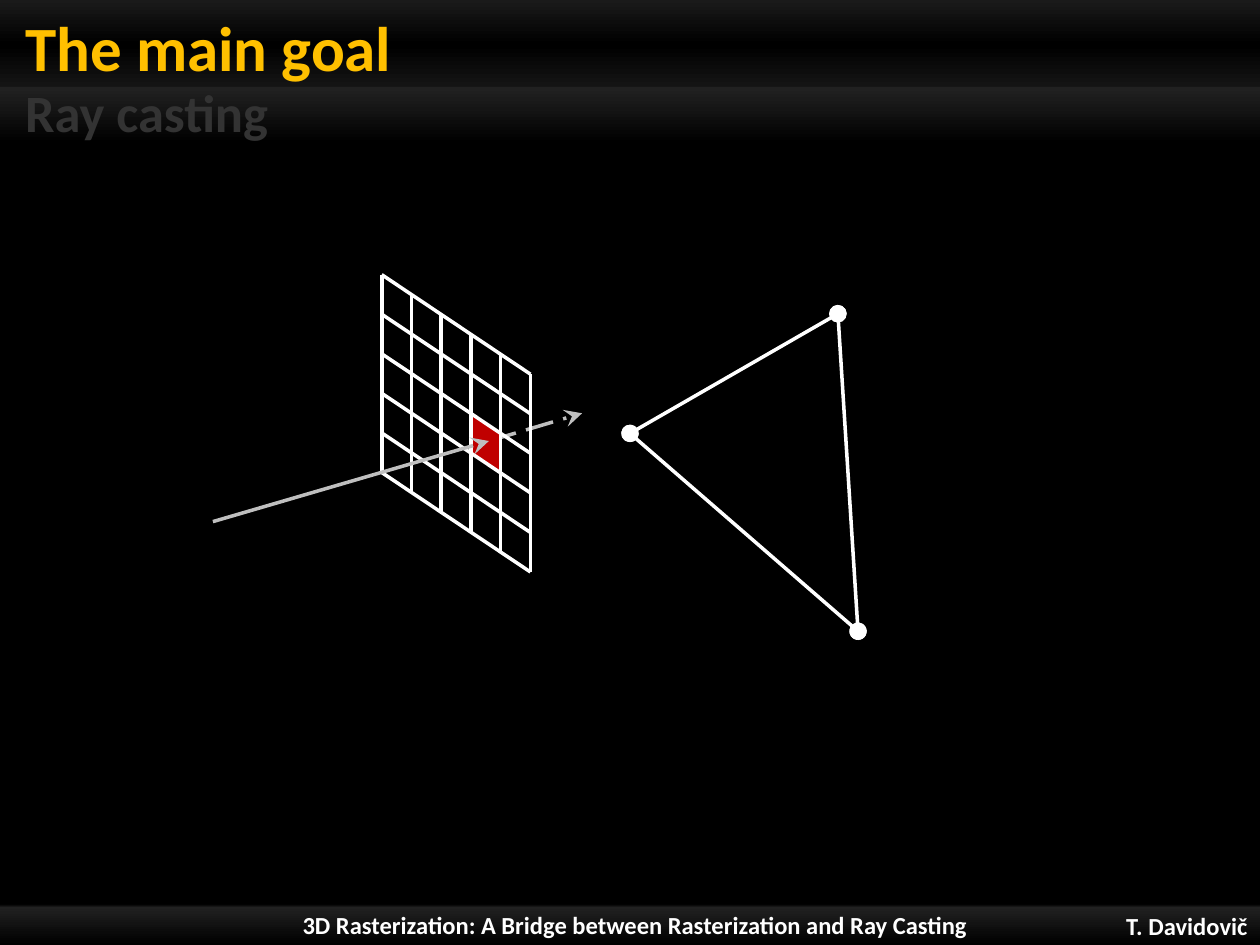
from lxml import etree
from pptx import Presentation
from pptx.dml.color import RGBColor
from pptx.enum import shapes as sh, text as tx
from pptx.oxml.ns import qn
from pptx.util import Inches, Pt

COLORS = {"back": "000000", "white": "FFFFFF", "gold": "FFC000",
          "dim": "333333", "ray": "BFBFBF", "hit": "C00000"}
FOOT = [(5, "000000"), (10, "141414"), (11, "212121"), (100, "000000")]
HEAD = [(0, "1A1A1A"), (31, "000000"), (60, "141414"), (61, "212121"),
        (100, "000000")]


def rgb(name):
    return RGBColor.from_string(COLORS[name])


def add_band(slide, box, stops):
    """Full-width bar with a vertical gradient of (percent, hex) stops."""
    band = slide.shapes.add_shape(sh.MSO_SHAPE.RECTANGLE, *map(Inches, box))
    band.shadow.inherit = False
    band.line.fill.background()
    band.fill.gradient()
    band.fill.gradient_angle = 270
    grad = band.fill._fill._gradFill.find(qn("a:gsLst"))
    for old in list(grad):
        grad.remove(old)
    for pos, tone in stops:
        stop = etree.SubElement(grad, qn("a:gs"), pos=str(pos * 1000))
        etree.SubElement(stop, qn("a:srgbClr"), val=tone)


def set_text(shape, box, words, size, color, align, anchor, left=0.1):
    shape.left, shape.top, shape.width, shape.height = map(Inches, box)
    frame = shape.text_frame
    frame.word_wrap = True
    frame.auto_size = tx.MSO_AUTO_SIZE.NONE
    frame.vertical_anchor = anchor
    frame.margin_left, frame.margin_right = Inches(left), Inches(0.1)
    frame.margin_top = frame.margin_bottom = 0
    para = frame.paragraphs[0]
    para.alignment = align
    run = para.add_run()
    run.text = words
    font = run.font
    font.name, font.size, font.bold = "Calibri", Pt(size), True
    font.color.rgb = rgb(color)


def add_label(slide, box, *style, **more):
    set_text(slide.shapes.add_textbox(*map(Inches, box)), box, *style, **more)


def add_line(slide, start, end, color="white", head=None, tail=None,
             dash=None):
    line = slide.shapes.add_connector(
        sh.MSO_CONNECTOR.STRAIGHT, *map(Inches, (*start, *end)))
    line.line.color.rgb = rgb(color)
    line.line.width = Pt(2)
    pen = line.line._get_or_add_ln()
    if dash:
        etree.SubElement(pen, qn("a:prstDash"), val=dash)
    for tag, kind in (("a:headEnd", head), ("a:tailEnd", tail)):
        if kind:
            etree.SubElement(pen, qn(tag), type=kind, w="lg", len="lg")
    etree.SubElement(line._element.spPr, qn("a:effectLst"))


def add_header(slide, box):
    x, y, w, h = box
    add_band(slide, box, HEAD)
    left, mid = tx.PP_ALIGN.LEFT, tx.MSO_ANCHOR.MIDDLE
    set_text(slide.shapes.title, (x, y, 8.23, 0.67), "The main goal", 36,
             "gold", left, tx.MSO_ANCHOR.BOTTOM, left=0.2)
    add_label(slide, (x, y + 0.65, 6.71, 0.47), "Ray casting", 30,
              "dim", left, mid, left=0.2)


def add_footer(slide, box):
    x, y, w, h = box
    add_band(slide, box, FOOT)
    mid = tx.MSO_ANCHOR.MIDDLE
    add_label(slide, (x + w - 1.85, y + 0.03, 1.85, 0.31), "T. Davidovič",
              14, "white", tx.PP_ALIGN.RIGHT, mid)
    add_label(slide, (x + 1.4, y + 0.01, 7.28, h),
              "3D Rasterization: A Bridge between Rasterization and Ray Casting",
              14, "white", tx.PP_ALIGN.CENTER, mid)


def add_grid(slide, box, skew, count, cell):
    """Slanted pixel grid; skew is the drop from its left to right side."""
    x, y, w, h = box

    def spot(col, row):
        return (x + w * col / count,
                y + skew * col / count + (h - skew) * row / count)

    col, row = cell
    ring = [spot(col, row), spot(col + 1, row),
            spot(col + 1, row + 1), spot(col, row + 1)]
    ring = [tuple(map(Inches, point)) for point in ring]
    form = slide.shapes.build_freeform(*ring[0], scale=1.0)
    form.add_line_segments(ring[1:], close=True)
    pixel = form.convert_to_shape()
    pixel.shadow.inherit = False
    pixel.fill.solid()
    pixel.fill.fore_color.rgb = rgb("hit")
    pixel.line.fill.background()
    for i in range(count + 1):
        add_line(slide, spot(i, 0), spot(i, count))
    for i in range(count + 1):
        add_line(slide, spot(0, i), spot(count, i))


def add_scene(slide, box):
    x, y, w, h = box
    eye, hit, far = (x, y + 1.96), (x + 2.19, y + 1.32), (x + 2.93, y + 1.1)
    add_line(slide, hit, far, "ray", tail="stealth", dash="lgDash")
    add_grid(slide, (x + 1.34, y, 1.18, 2.36), 0.79, 5, (3, 2))
    peak, side, low = (x + 4.96, y + 0.31), (x + 3.31, y + 1.26), (x + w, y + h)
    for start, end in ((side, low), (peak, side), (peak, low)):
        add_line(slide, start, end, head="oval", tail="oval")
    add_line(slide, eye, hit, "ray", tail="stealth")


def main():
    deck = Presentation()
    deck.slide_width, deck.slide_height = Inches(10), Inches(7.5)
    slide = deck.slides.add_slide(deck.slide_layouts[5])
    slide.background.fill.solid()
    slide.background.fill.fore_color.rgb = rgb("back")
    add_footer(slide, (0, 7.16, 10, 0.34))
    add_header(slide, (0, 0, 10, 1.14))
    title = slide.shapes.title._element
    title.getparent().append(title)
    add_scene(slide, (1.69, 2.18, 5.12, 2.83))
    deck.save("out.pptx")


if __name__ == "__main__":
    main()
